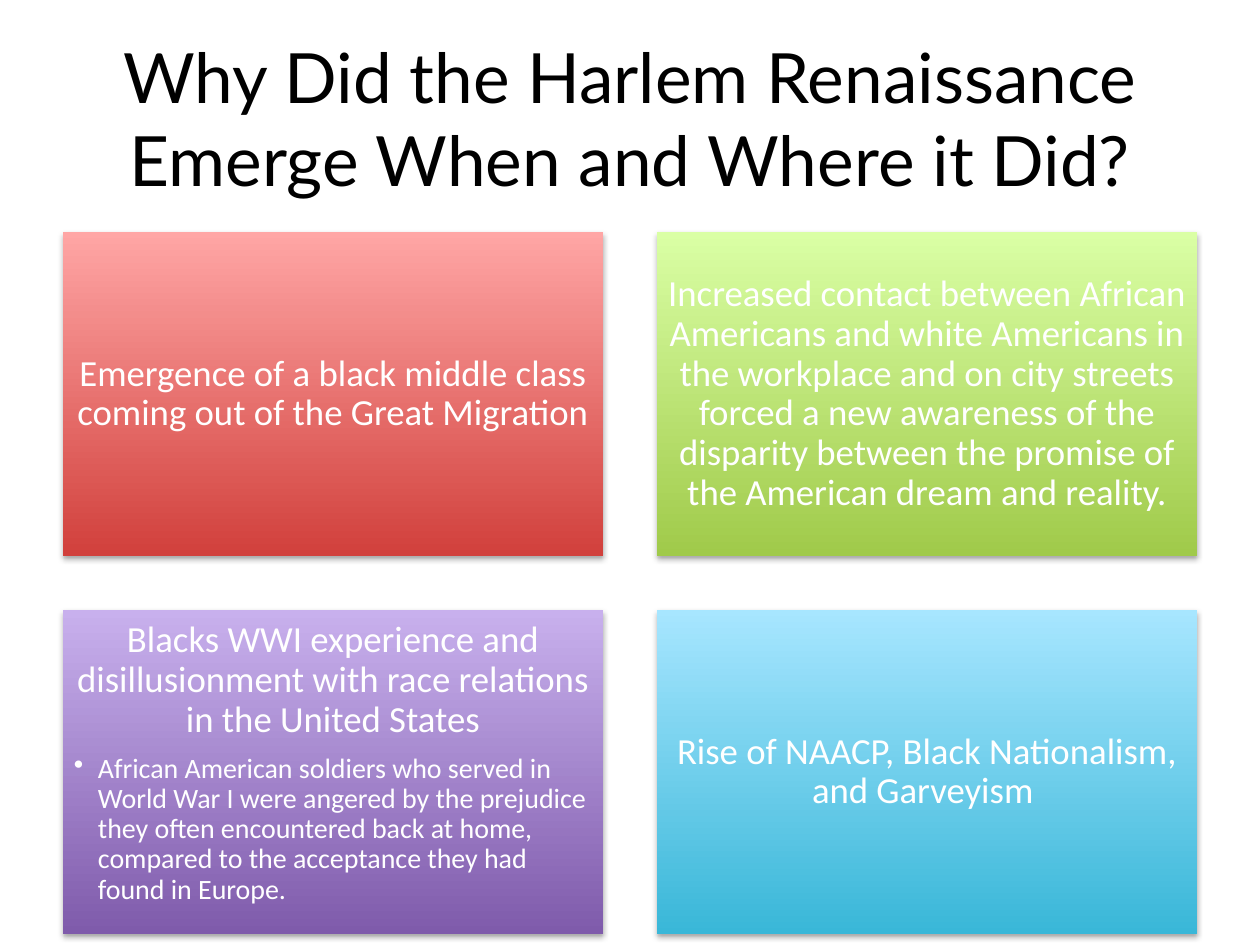
import pptx
import pptx.util
import pptx.dml.color
import pptx.enum.shapes
import pptx.enum.text
import pptx.oxml
import pptx.oxml.ns
from dataclasses import dataclass

TITLE = "Why Did the Harlem Renaissance Emerge When and Where it Did?"
CARDS = [
    ("Emergence of a black middle class coming out of the Great Migration",
     None, "D1403C", "FFA6A5"),
    ("Increased contact between African Americans and white Americans in the "
     "workplace and on city streets forced a new awareness of the disparity "
     "between the promise of the American dream and reality.",
     None, "A0CA4A", "DAFFA5"),
    ("Blacks WWI experience and disillusionment with race relations in the "
     "United States",
     "African American soldiers who served in World War I were angered by the "
     "prejudice they often encountered back at home, compared to the "
     "acceptance they had found in Europe.", "7F5BAB", "C8B0ED"),
    ("Rise of NAACP, Black Nationalism, and Garveyism ",
     None, "39B7D8", "A7E6FF"),
]


@dataclass(frozen=True)
class Theme:
    title_font: str = "Lato"
    body_font: str = "Calibri"
    title_size: float = 39.6
    heading_size: int = 21
    detail_size: int = 16
    dark: str = "000000"
    light: str = "FFFFFF"


THEME = Theme()
PAGE_WIDTH, PAGE_HEIGHT = 1260, 945
LEFT, TOP, CARD_WIDTH, CARD_HEIGHT, GAP = 63, 232, 540, 324, 54
COLUMNS, INSET, INDENT = 2, 11, 24
ALIGN = pptx.enum.text.PP_ALIGN
ANCHOR = pptx.enum.text.MSO_ANCHOR
NAMESPACE = pptx.oxml.ns.nsdecls("a")
SHADOW = (f'<a:outerShdw {NAMESPACE} blurRad="40000" dist="23000" dir="5400000" '
          'rotWithShape="0"><a:srgbClr val="000000"><a:alpha val="35000"/>'
          '</a:srgbClr></a:outerShdw>')


def px(length):
    return pptx.util.Emu(round(length * 914400 / 126))


def rgb(value):
    return pptx.dml.color.RGBColor.from_string(value)


def write(para, text, font, size, color, align):
    para.alignment = align
    span = para.add_run()
    span.text = text
    span.font.name = font
    span.font.size = pptx.util.Pt(size)
    span.font.color.rgb = rgb(color)


def add_bullet(para):
    properties = para._p.get_or_add_pPr()
    properties.set("marL", str(px(INDENT)))
    properties.set("indent", str(px(-INDENT)))
    properties.append(pptx.oxml.parse_xml(f'<a:buChar {NAMESPACE} char="•"/>'))


def style_card(card, bottom_color, top_color):
    card.fill.gradient()
    card.fill.gradient_angle = 90
    for stop, color in zip(card.fill.gradient_stops, (bottom_color, top_color)):
        stop.color.rgb = rgb(color)
    card.line.fill.background()
    card.shadow.inherit = False
    effects = card._element.spPr.find(pptx.oxml.ns.qn("a:effectLst"))
    effects.append(pptx.oxml.parse_xml(SHADOW))


def add_card(page, index, heading, detail, bottom_color, top_color):
    row, column = divmod(index, COLUMNS)
    card = page.shapes.add_shape(
        pptx.enum.shapes.MSO_SHAPE.RECTANGLE,
        px(LEFT + column * (CARD_WIDTH + GAP)),
        px(TOP + row * (CARD_HEIGHT + GAP)), px(CARD_WIDTH), px(CARD_HEIGHT))
    style_card(card, bottom_color, top_color)
    frame = card.text_frame
    frame.word_wrap = True
    frame.vertical_anchor = ANCHOR.TOP if detail else ANCHOR.MIDDLE
    frame.margin_left = frame.margin_right = px(INSET)
    frame.margin_top = frame.margin_bottom = px(INSET)
    para = frame.paragraphs[0]
    para.line_spacing = 0.9
    write(para, heading, THEME.body_font, THEME.heading_size, THEME.light,
          ALIGN.CENTER)
    if detail:
        para.space_after = pptx.util.Pt(8)
        para = frame.add_paragraph()
        para.level = 1
        para.line_spacing = 0.9
        write(para, detail, THEME.body_font, THEME.detail_size, THEME.light,
              ALIGN.LEFT)
        add_bullet(para)


def main():
    deck = pptx.Presentation()
    deck.slide_width, deck.slide_height = px(PAGE_WIDTH), px(PAGE_HEIGHT)
    page = deck.slides.add_slide(deck.slide_layouts[6])
    box = page.shapes.add_textbox(px(LEFT), px(38), px(PAGE_WIDTH - 2 * LEFT),
                                  px(158))
    box.text_frame.word_wrap = True
    box.text_frame.vertical_anchor = ANCHOR.MIDDLE
    write(box.text_frame.paragraphs[0], TITLE, THEME.title_font,
          THEME.title_size, THEME.dark, ALIGN.CENTER)
    for index, card in enumerate(CARDS):
        add_card(page, index, *card)
    deck.save("out.pptx")


if __name__ == "__main__":
    main()
